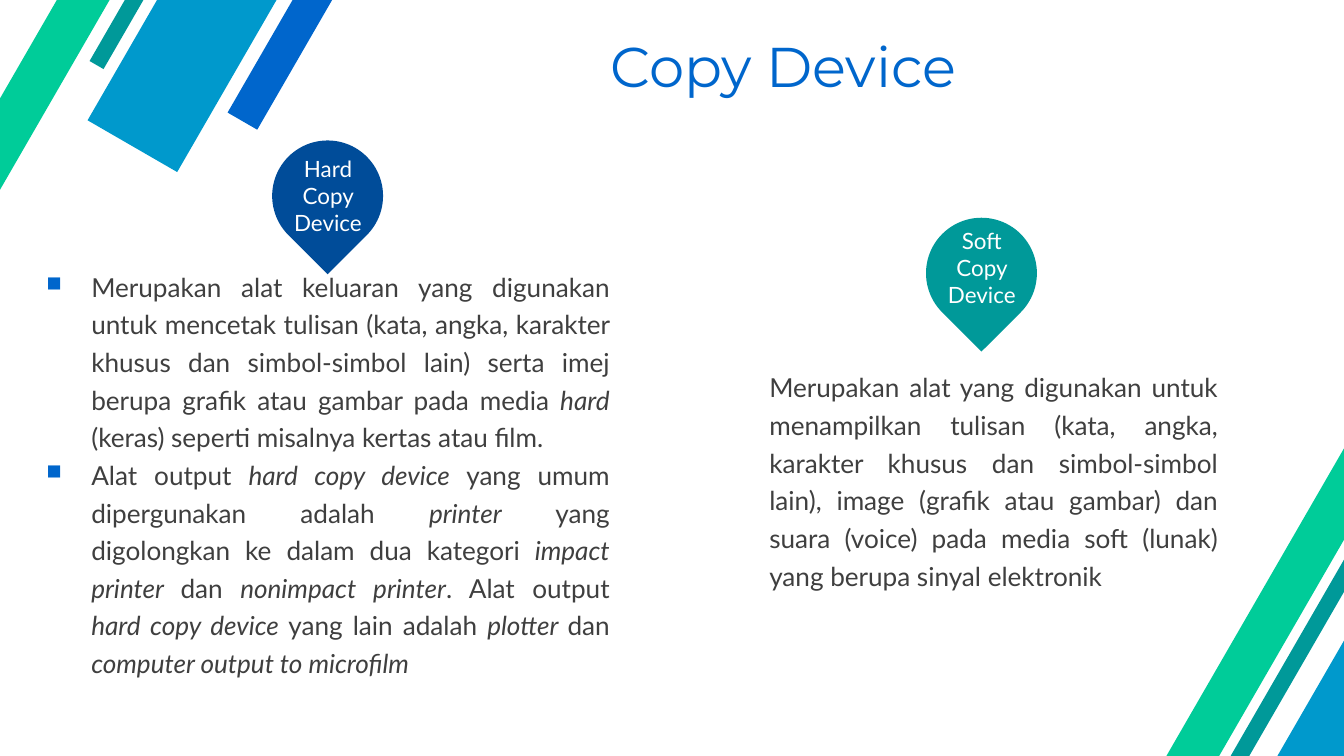
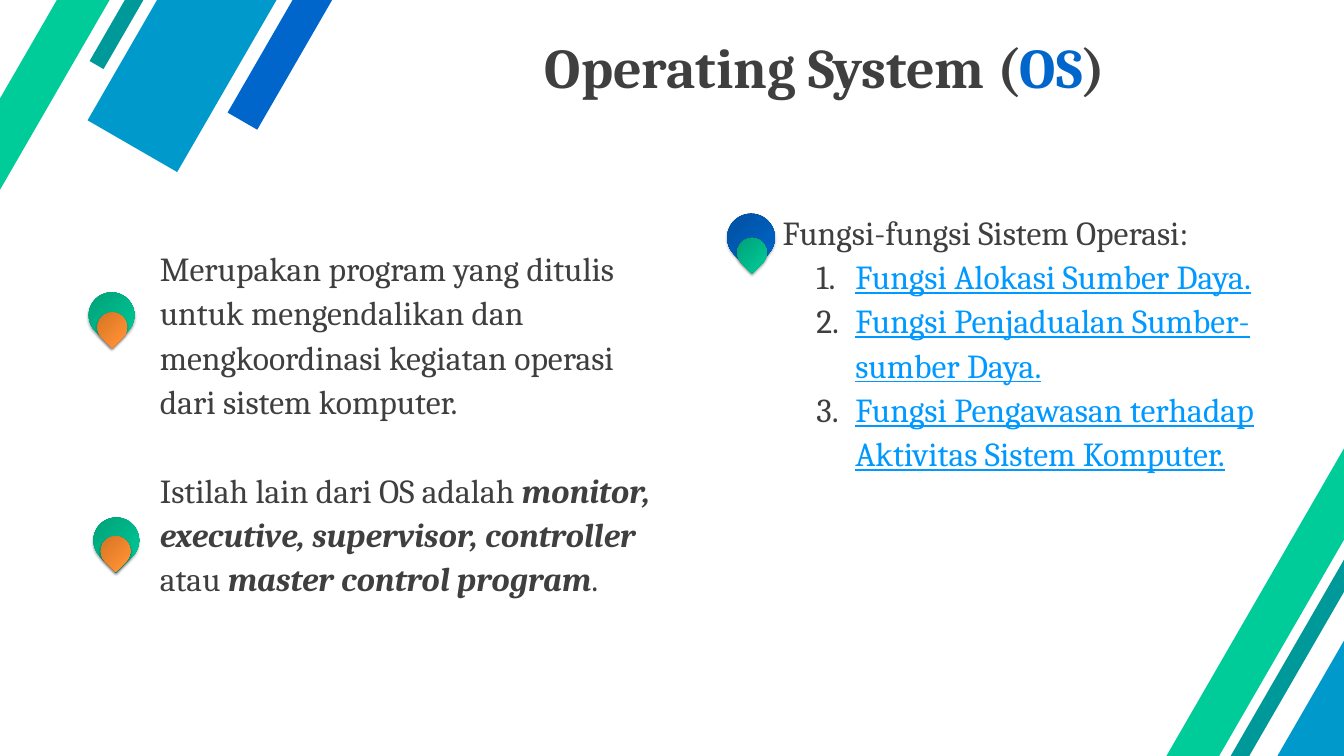
"""Build two slides on copy devices and operating systems."""
from dataclasses import dataclass
from typing import NamedTuple

from lxml import etree
from pptx import Presentation
from pptx.dml.color import RGBColor
from pptx.enum.shapes import MSO_SHAPE
from pptx.enum.text import MSO_ANCHOR, MSO_AUTO_SIZE, PP_ALIGN
from pptx.oxml import parse_xml
from pptx.oxml.ns import nsdecls, qn
from pptx.util import Inches, Pt

RECT, TEARDROP = MSO_SHAPE.RECTANGLE, MSO_SHAPE.TEAR
TOP, MIDDLE = MSO_ANCHOR.TOP, MSO_ANCHOR.MIDDLE
GROW, NO_GROW = MSO_AUTO_SIZE.SHAPE_TO_FIT_TEXT, MSO_AUTO_SIZE.NONE
LEFT, CENTER, JUSTIFY = PP_ALIGN.LEFT, PP_ALIGN.CENTER, PP_ALIGN.JUSTIFY

COLORS = {
    "blue": "0066CC", "sky": "0099CC", "teal": "009999", "green": "00CC99",
    "navy": "004C99", "text": "3F3F3F", "white": "FFFFFF", "link": "0099FF",
}
GRADIENTS = {
    "blue": ("004C98", "0063C6", "0063C7"),
    "green": ("009872", "00C694", "00C795"),
    "orange": ("CC6E20", "FF9034", "FF9136"),
}
STOPS = (0, 80, 100)
LATO, CAMBRIA, MONTSERRAT = "Lato", "Cambria", "Montserrat"


class Box(NamedTuple):
    left: float
    top: float
    width: float
    height: float


class Run(NamedTuple):
    text: str
    italic: bool = False
    bold: bool = False
    underline: bool = False
    color: str = ""


@dataclass
class Para:
    runs: list[Run]
    bullet: str = ""
    before: float = 0


@dataclass
class Style:
    font: str
    size: float
    color: str = "text"
    align: PP_ALIGN = LEFT
    spacing: float = 1.0


class Band(NamedTuple):
    box: Box
    color: str


class Pin(NamedTuple):
    left: float
    top: float
    color: str
    label: str
    label_top: float


class Marker(NamedTuple):
    outer: Box
    outer_gradient: str
    inner: Box
    inner_gradient: str


BANDS = [
    Band(Box(-1.42, -7.16, 20.11, 0.51), "blue"),
    Band(Box(-3.05, -7.29, 20.08, 1.54), "sky"),
    Band(Box(-3.59, -7.86, 20.11, 0.24), "teal"),
    Band(Box(-5.83, -5.47, 20.06, 0.68), "green"),
    Band(Box(13.68, 3.86, 20.08, 1.54), "sky"),
    Band(Box(12.9, 3.33, 20.11, 0.24), "teal"),
    Band(Box(10.71, 5.73, 20.06, 0.68), "green"),
]
PINS = [
    Pin(13.78, 3.24, "teal", "Soft Copy Device", 3.33),
    Pin(4.05, 2.09, "navy", "Hard Copy Device", 2.26),
]
MARKERS = [
    Marker(Box(10.82, 3.18, 0.71, 0.71), "blue", Box(10.97, 3.54, 0.44, 0.44), "green"),
    Marker(Box(1.32, 4.35, 0.68, 0.68), "green", Box(1.45, 4.65, 0.44, 0.44), "orange"),
    Marker(Box(1.39, 7.7, 0.68, 0.68), "green", Box(1.5, 7.98, 0.44, 0.44), "orange"),
]
BODY = Style(LATO, 28, align=JUSTIFY, spacing=1.2)
OS_BODY = Style(CAMBRIA, 36, spacing=1.1)
PIN_LABEL = Style(LATO, 24, "white", CENTER)

HARD_COPY = [
    Para([
        Run("Merupakan alat keluaran yang digunakan untuk mencetak tulisan (kata, angka, "
            "karakter khusus dan simbol-simbol lain) serta imej berupa grafik atau gambar "
            "pada media "),
        Run("hard", italic=True),
        Run(" (keras) seperti misalnya kertas atau film."),
    ], "square"),
    Para([
        Run("Alat output "),
        Run("hard copy device", italic=True),
        Run(" yang umum dipergunakan adalah "),
        Run("printer", italic=True),
        Run(" yang digolongkan ke dalam dua kategori "),
        Run("impact printer ", italic=True),
        Run("dan "),
        Run("nonimpact printer", italic=True),
        Run(". Alat output "),
        Run("hard copy device", italic=True),
        Run(" yang lain adalah "),
        Run("plotter ", italic=True),
        Run("dan "),
        Run("computer output to microfilm", italic=True),
    ], "square"),
]
SOFT_COPY = [Para([Run(
    "Merupakan alat yang digunakan untuk menampilkan tulisan (kata, angka, karakter khusus "
    "dan simbol-simbol lain), image (grafik atau gambar) dan suara (voice) pada media soft "
    "(lunak) yang berupa sinyal elektronik")])]
OS_MEANING = [
    Para([Run("Merupakan program yang ditulis untuk mengendalikan dan mengkoordinasi "
              "kegiatan operasi dari sistem komputer.")]),
    Para([
        Run("Istilah lain dari OS adalah "),
        Run("monitor, executive, supervisor, controller ", italic=True, bold=True),
        Run("atau "),
        Run("master control program", italic=True, bold=True),
        Run("."),
    ], before=47.5),
]
FUNCTIONS = [
    "Fungsi Alokasi Sumber Daya.",
    "Fungsi Penjadualan Sumber-sumber Daya.",
    "Fungsi Pengawasan terhadap Aktivitas Sistem Komputer.",
]
OS_FUNCTIONS = [Para([Run("Fungsi-fungsi Sistem Operasi:")])] + [
    Para([Run(name, underline=True, color="link")], "number") for name in FUNCTIONS]


def rgb(name: str) -> RGBColor:
    return RGBColor.from_string(COLORS[name])


def add_bullet(p, kind: str) -> None:
    square = kind == "square"
    margin, hang = (0.67, 0.67) if square else (1.08, 0.58)
    pPr = p._p.get_or_add_pPr()
    pPr.set("marL", str(Inches(margin)))
    pPr.set("indent", str(-Inches(hang)))
    color = etree.SubElement(pPr, qn("a:buClr"))
    etree.SubElement(color, qn("a:srgbClr"), val=COLORS["blue" if square else "text"])
    if square:
        etree.SubElement(pPr, qn("a:buSzPct"), val="80000")
        etree.SubElement(pPr, qn("a:buChar"), char="■")
    else:
        etree.SubElement(pPr, qn("a:buAutoNum"), type="arabicPeriod")


def add_text(slide, box: Box, paras: list[Para], style: Style, title: bool = False) -> None:
    tf = slide.shapes.add_textbox(*map(Inches, box)).text_frame
    tf.word_wrap = True
    tf.auto_size = NO_GROW if title else GROW
    tf.vertical_anchor = MIDDLE if title else TOP
    if title:
        tf.margin_left = tf.margin_right = Inches(0.18)
        tf.margin_top = tf.margin_bottom = Inches(0.09)
    for i, para in enumerate(paras):
        p = tf.add_paragraph() if i else tf.paragraphs[0]
        if para.bullet:
            add_bullet(p, para.bullet)
        p.alignment = style.align
        p.line_spacing = style.spacing
        if para.before:
            p.space_before = Pt(para.before)
        for run in para.runs:
            r = p.add_run()
            r.text = run.text
            font = r.font
            font.name, font.size = style.font, Pt(style.size)
            font.bold, font.italic, font.underline = run.bold, run.italic, run.underline
            font.color.rgb = rgb(run.color or style.color)


def add_plain(slide, kind: MSO_SHAPE, box: Box, rotation: float, color: str):
    sp = slide.shapes.add_shape(kind, *map(Inches, box))
    sp.rotation = rotation
    sp.fill.solid()
    sp.fill.fore_color.rgb = rgb(color)
    sp.line.fill.background()
    sp.shadow.inherit = False
    return sp


def add_glossy_drop(slide, box: Box, gradient: str) -> None:
    spPr = add_plain(slide, TEARDROP, box, 135, "green")._element.spPr
    stops = "".join(
        f'<a:gs pos="{pos * 1000}"><a:srgbClr val="{color}"/></a:gs>'
        for pos, color in zip(STOPS, GRADIENTS[gradient]))
    spPr.replace(spPr.find(qn("a:solidFill")), parse_xml(
        f'<a:gradFill {nsdecls("a")} rotWithShape="1"><a:gsLst>{stops}</a:gsLst>'
        '<a:lin ang="16200000" scaled="0"/></a:gradFill>'))
    spPr.find(qn("a:effectLst")).append(parse_xml(
        f'<a:outerShdw {nsdecls("a")} blurRad="{Pt(3.1)}" dist="{Pt(1.8)}" dir="5400000" '
        'rotWithShape="0"><a:srgbClr val="000000"><a:alpha val="35000"/></a:srgbClr>'
        '</a:outerShdw>'))


def add_pin(slide, pin: Pin) -> None:
    add_plain(slide, TEARDROP, Box(pin.left, pin.top, 1.65, 1.65), 135, pin.color)
    label = Box(pin.left + 0.12, pin.label_top, 1.42, 1.31)
    add_text(slide, label, [Para([Run(pin.label)])], PIN_LABEL)


def add_slide(prs, title_box: Box, title: list[Run], style: Style):
    slide = prs.slides.add_slide(prs.slide_layouts[6])
    for band in BANDS:
        add_plain(slide, RECT, band.box, 300, band.color)
    add_text(slide, title_box, [Para(title)], style, title=True)
    return slide


def build_copy_device(prs) -> None:
    slide = add_slide(prs, Box(8.9, 0.43, 5.51, 1.08), [Run("Copy Device")],
                      Style(MONTSERRAT, 60, "blue"))
    add_text(slide, Box(0.59, 3.89, 8.58, 6.89), HARD_COPY, BODY)
    add_text(slide, Box(11.35, 5.39, 6.87, 3.49), SOFT_COPY, BODY)
    for pin in PINS:
        add_pin(slide, pin)


def build_operating_system(prs) -> None:
    title = [Run("Operating System (", bold=True), Run("OS", bold=True, color="blue"),
             Run(")", bold=True)]
    slide = add_slide(prs, Box(4.8, 0.45, 14.96, 1.08), title,
                      Style(CAMBRIA, 60, align=CENTER))
    add_text(slide, Box(2.28, 3.58, 7.64, 6.1), OS_MEANING, OS_BODY)
    add_text(slide, Box(11.55, 3.04, 7.87, 4.1), OS_FUNCTIONS, OS_BODY)
    for marker in MARKERS:
        add_glossy_drop(slide, marker.outer, marker.outer_gradient)
        add_glossy_drop(slide, marker.inner, marker.inner_gradient)


def main() -> None:
    prs = Presentation()
    prs.slide_width, prs.slide_height = Inches(20), Inches(11.25)
    build_copy_device(prs)
    build_operating_system(prs)
    prs.save("out.pptx")


if __name__ == "__main__":
    main()
